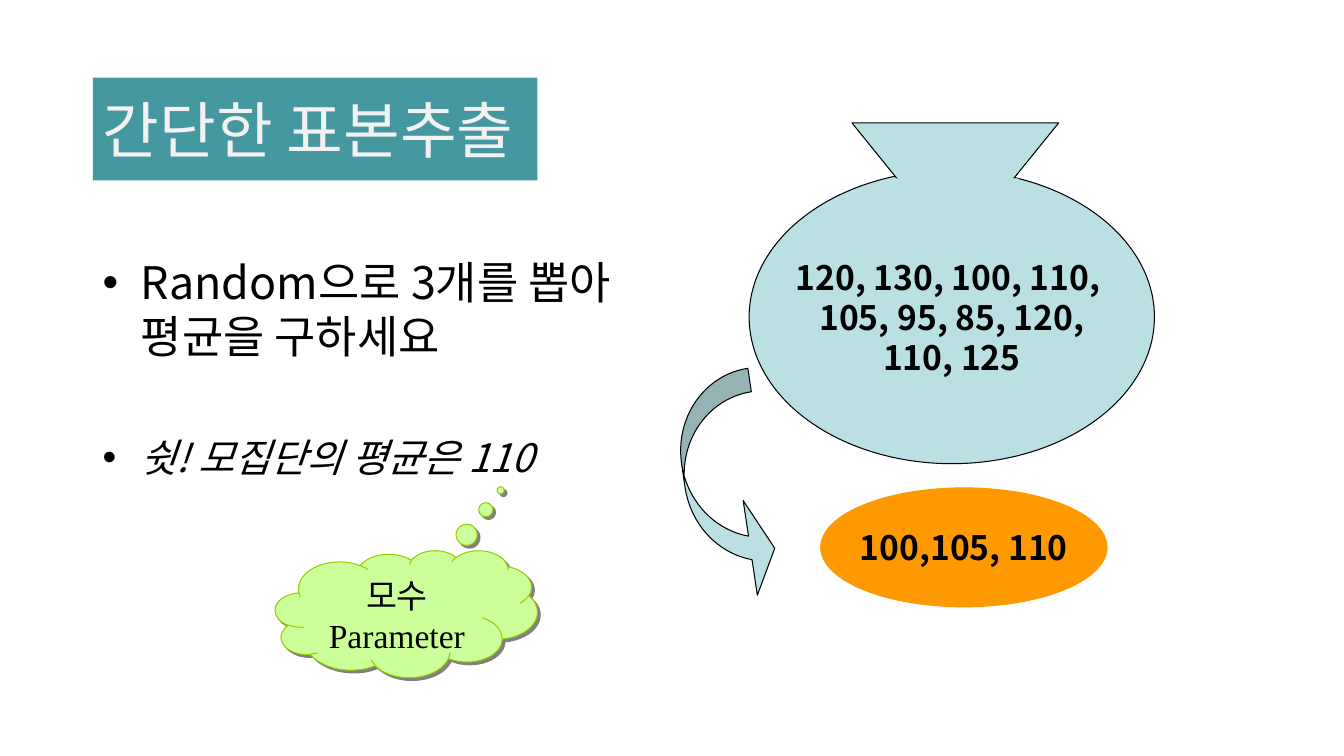
from lxml import etree
from pptx import Presentation
from pptx import util as u
from pptx.dml import color
from pptx.enum import shapes, text
from pptx.oxml import ns

SANS = "Noto Sans CJK KR"
SERIF = "Times New Roman"
BLACK = "000000"
SACK_BLUE = "BBE0E3"
ORANGE = "FF9900"
LIME = "CCFF99"


def rgb(code):
    return color.RGBColor.from_string(code)


def place(item, box):
    for name, length in zip(("left", "top", "width", "height"), box):
        setattr(item, name, u.Inches(length))


def add_preset(parent, preset, box, fill, line=None):
    item = parent.add_shape(preset, *map(u.Inches, box))
    paint(item, fill, line)
    return item


def paint(item, fill, line=None):
    item.shadow.inherit = False
    item.fill.solid()
    item.fill.fore_color.rgb = rgb(fill)
    if line:
        item.line.color.rgb = rgb(line)
        item.line.width = u.Pt(0.75)
    else:
        item.line.fill.background()


def set_frame(item, **values):
    for name, value in values.items():
        setattr(item.text_frame, name, value)


def write(paragraph, words, ink=BLACK, family=SANS, align=text.PP_ALIGN.CENTER, **values):
    paragraph.alignment = align
    run = paragraph.add_run()
    run.text = words
    run.font.color.rgb = rgb(ink)
    for name, value in {"name": family, **values}.items():
        setattr(run.font, name, value)
    east_asian = etree.SubElement(run._r.get_or_add_rPr(), ns.qn("a:ea"))
    east_asian.set("typeface", family)


def write_lines(item, lines, **values):
    frame = item.text_frame
    for index, words in enumerate(lines):
        paragraph = frame.add_paragraph() if index else frame.paragraphs[0]
        write(paragraph, words, **values)


def add_bullet(paragraph):
    properties = paragraph._p.get_or_add_pPr()
    properties.set("marL", str(u.Inches(0.38)))
    properties.set("indent", str(u.Inches(-0.38)))
    etree.SubElement(properties, ns.qn("a:buFont")).set("typeface", "Arial")
    etree.SubElement(properties, ns.qn("a:buChar")).set("char", "•")


def add_hard_shadow(item, shade):
    effects = item._element.spPr.find(ns.qn("a:effectLst"))
    shadow = etree.SubElement(effects, ns.qn("a:outerShdw"), dist=str(u.Pt(2.8)),
                              dir="2700000", algn="ctr", rotWithShape="0")
    etree.SubElement(shadow, ns.qn("a:srgbClr"), val=shade)


def build_title(slide, box):
    title = slide.shapes.title
    place(title, box)
    title.fill.solid()
    title.fill.fore_color.rgb = rgb("4597A0")
    set_frame(title, auto_size=text.MSO_AUTO_SIZE.NONE, word_wrap=True,
              vertical_anchor=text.MSO_ANCHOR.MIDDLE)
    write(title.text_frame.paragraphs[0], "간단한 표본추출", "F2F2F2",
          align=text.PP_ALIGN.LEFT, size=u.Pt(44))


def build_task(slide, box):
    task = slide.shapes.add_textbox(*map(u.Inches, box))
    set_frame(task, word_wrap=True)
    instruction = task.text_frame.paragraphs[0]
    secret = task.text_frame.add_paragraph()
    for paragraph, words, size, gap, italic in (
        (instruction, "Random으로 3개를 뽑아 평균을 구하세요", 32, 6.4, False),
        (secret, "쉿! 모집단의 평균은 110", 28, 50.5, True),
    ):
        write(paragraph, words, align=text.PP_ALIGN.LEFT, size=u.Pt(size), italic=italic)
        paragraph.space_before = u.Pt(gap)
        add_bullet(paragraph)


def build_draw_arrow(slide, box):
    arrow = add_preset(slide.shapes, shapes.MSO_SHAPE.CURVED_RIGHT_ARROW, box, SACK_BLUE, BLACK)
    arrow.rotation = 351.5
    for index, value in enumerate((0.298, 1.201, 0.303)):
        arrow.adjustments[index] = value


def build_sample(slide, box):
    sample = add_preset(slide.shapes, shapes.MSO_SHAPE.OVAL, box, ORANGE, ORANGE)
    set_frame(sample, word_wrap=False, vertical_anchor=text.MSO_ANCHOR.MIDDLE)
    write_lines(sample, ["100,105, 110"], size=u.Pt(24), bold=True)


def build_parameter_cloud(slide, box):
    cloud = add_preset(slide.shapes, shapes.MSO_SHAPE.CLOUD_CALLOUT, box, LIME, "99CC00")
    cloud.adjustments[0] = 0.36
    cloud.adjustments[1] = -0.973
    add_hard_shadow(cloud, "808080")
    set_frame(cloud, word_wrap=True, vertical_anchor=text.MSO_ANCHOR.TOP)
    write_lines(cloud, ["모수"], size=u.Pt(24))
    write(cloud.text_frame.add_paragraph(), "Parameter", family=SERIF, size=u.Pt(24))


def build_population_sack(slide, box):
    left, top, width, height = box
    sack = slide.shapes.add_group_shape().shapes
    belly = add_preset(sack, shapes.MSO_SHAPE.OVAL,
                       (left, top + 0.47, width, height - 0.47), SACK_BLUE, BLACK)
    set_frame(belly, word_wrap=False, vertical_anchor=text.MSO_ANCHOR.MIDDLE)
    write_lines(belly, ["120, 130, 100, 110, ", "105, 95, 85, 120,", "110, 125"],
                size=u.Pt(24), bold=True)

    rim = [(1.02, 0), (1.53, 0.63), (2.56, 0.63), (3.07, 0)]
    corners = [(u.Inches(left + x), u.Inches(top + y)) for x, y in rim]
    outline = sack.build_freeform(*corners[0])
    outline.add_line_segments(corners[1:], close=True)
    paint(outline.convert_to_shape(), SACK_BLUE, BLACK)

    add_preset(sack, shapes.MSO_SHAPE.RECTANGLE, (left + 1.41, top + 0.55, 1.26, 0.31), SACK_BLUE)


def main():
    deck = Presentation()
    deck.slide_width = u.Inches(13.33)
    deck.slide_height = u.Inches(7.5)
    slide = deck.slides.add_slide(deck.slide_layouts.get_by_name("Title Only"))
    build_title(slide, (0.92, 0.77, 4.41, 1.02))
    build_task(slide, (0.92, 2.48, 5.27, 3.54))
    build_draw_arrow(slide, (6.8, 3.7, 0.79, 2.28))
    build_sample(slide, (8.14, 4.84, 2.84, 1.18))
    build_parameter_cloud(slide, (2.73, 5.46, 2.6, 1.26))
    build_population_sack(slide, (7.43, 1.22, 4.02, 3.38))
    deck.save("out.pptx")


if __name__ == "__main__":
    main()
